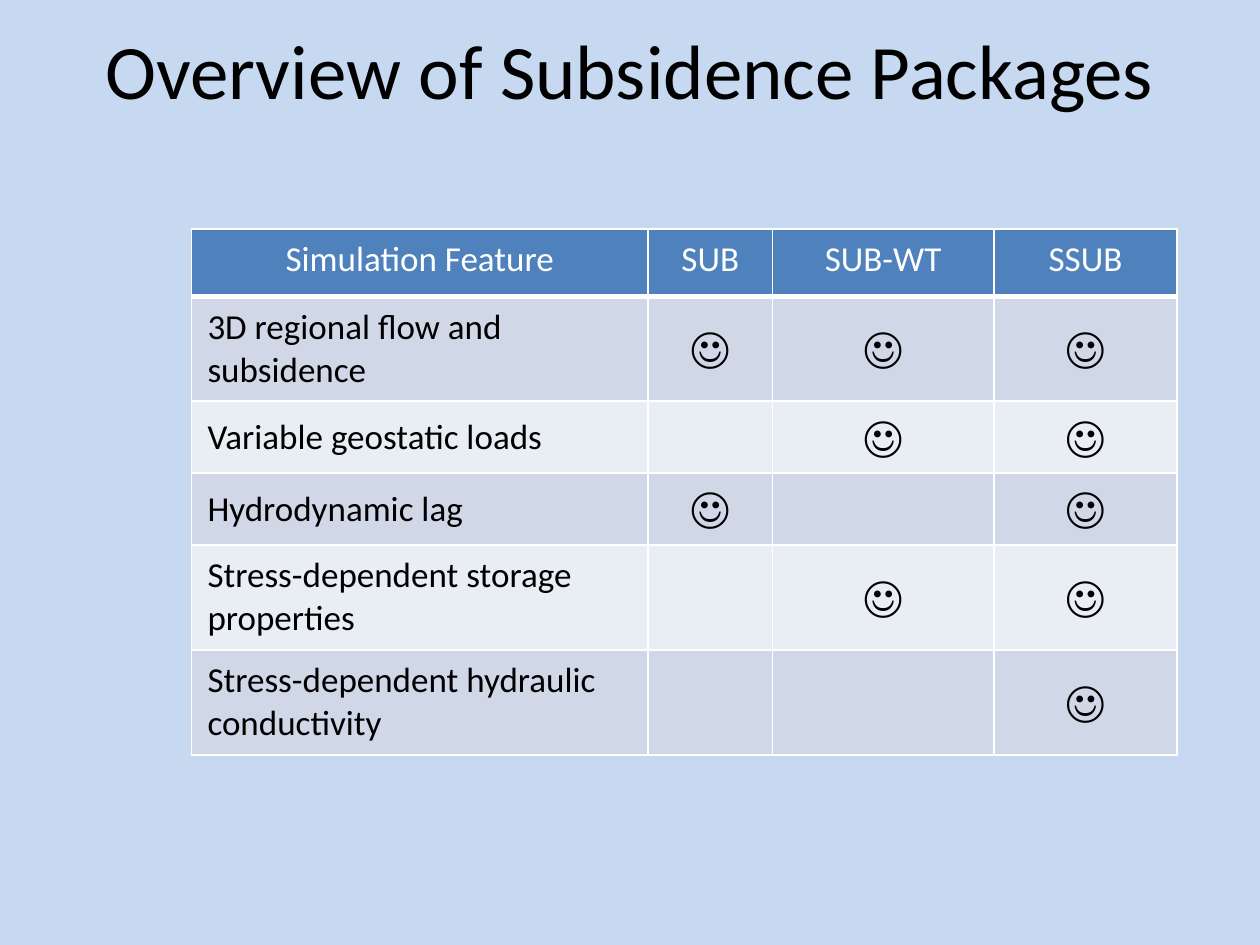
import pptx
import pptx.dml.color
import pptx.enum.text
import pptx.oxml
import pptx.oxml.ns
import pptx.util
from dataclasses import dataclass

Pt = pptx.util.Pt
Align = pptx.enum.text.PP_ALIGN
Anchor = pptx.enum.text.MSO_ANCHOR


@dataclass(frozen=True)
class Theme:
    font: str = "Calibri"
    background: str = "C6D9F1"
    header: str = "4F81BD"
    bands: tuple = ("D0D8E8", "E9EDF4")
    light: str = "FFFFFF"
    dark: str = "000000"
    title_size: float = 44
    body_size: float = 20
    mark_size: float = 25
    line: float = 1
    header_line: float = 3


def rgb(value):
    return pptx.dml.color.RGBColor.from_string(value)


def write_text(frame, text, font, size, color, align=Align.CENTER):
    para = frame.paragraphs[0]
    para.alignment = align
    para.font.size = Pt(size)
    if text:
        span = para.add_run()
        span.text = text
        span.font.name = font
        span.font.size = Pt(size)
        span.font.color.rgb = rgb(color)


class SlideBuilder:
    def __init__(self, page, theme):
        self.page = page
        self.theme = theme
        page.background.fill.solid()
        page.background.fill.fore_color.rgb = rgb(theme.background)

    def title(self, text, left, top, width, height):
        box = self.page.shapes.add_textbox(Pt(left), Pt(top), Pt(width), Pt(height))
        frame = box.text_frame
        frame.word_wrap = True
        frame.vertical_anchor = Anchor.MIDDLE
        write_text(frame, text, self.theme.font, self.theme.title_size, self.theme.dark)

    def borders(self, cell, bottom):
        properties = cell._tc.get_or_add_tcPr()
        line = self.theme.line
        for side, width in (("L", line), ("R", line), ("T", line), ("B", bottom)):
            properties.append(pptx.oxml.parse_xml(
                f'<a:ln{side} {pptx.oxml.ns.nsdecls("a")} w="{Pt(width)}"><a:solidFill>'
                f'<a:srgbClr val="{self.theme.light}"/></a:solidFill></a:ln{side}>'))

    def cell(self, cell, text, is_header, band):
        theme = self.theme
        self.borders(cell, theme.header_line if is_header else theme.line)
        cell.fill.solid()
        cell.fill.fore_color.rgb = rgb(theme.header if is_header else theme.bands[band])
        cell.margin_left = cell.margin_right = Pt(9.2)
        cell.margin_top = cell.margin_bottom = Pt(5)
        cell.vertical_anchor = Anchor.TOP if is_header else Anchor.MIDDLE
        is_label = not is_header and text not in (MARK, "")
        write_text(cell.text_frame, text, theme.font,
                   theme.mark_size if text == MARK else theme.body_size,
                   theme.light if is_header else theme.dark,
                   Align.LEFT if is_label else Align.CENTER)

    def table(self, rows, left, top, widths, heights):
        frame = self.page.shapes.add_table(
            len(rows), len(widths), Pt(left), Pt(top), Pt(sum(widths)), Pt(sum(heights)))
        table = frame.table
        for column, width in zip(table.columns, widths):
            column.width = Pt(width)
        for r, (values, height) in enumerate(zip(rows, heights)):
            table.rows[r].height = Pt(height)
            for c, text in enumerate(values):
                self.cell(table.cell(r, c), text, r == 0, (r - 1) % 2)


MARK = "☺"
PACKAGES = ["SUB", "SUB-WT", "SSUB"]
FEATURES = {
    "3D regional flow and subsidence": PACKAGES,
    "Variable geostatic loads": ["SUB-WT", "SSUB"],
    "Hydrodynamic lag": ["SUB", "SSUB"],
    "Stress-dependent storage properties": ["SUB-WT", "SSUB"],
    "Stress-dependent hydraulic conductivity": ["SSUB"],
}
ONE_LINE, TWO_LINES = 41.1, 60
ROW_HEIGHTS = [38.3, TWO_LINES, ONE_LINE, ONE_LINE, TWO_LINES, TWO_LINES]
TABLE_LEFT, TABLE_TOP = 109.4, 131
MAIN_WIDTHS = [261, 71, 126.7]


def main():
    deck = pptx.Presentation()
    deck.slide_width, deck.slide_height = Pt(720), Pt(540)
    builder = SlideBuilder(deck.slides.add_slide(deck.slide_layouts[6]), Theme())

    # Title
    builder.title("Overview of Subsidence Packages", 36, -6, 648, 90)

    # Feature grid, with the last package in a table of its own
    rows = [["Simulation Feature"] + PACKAGES]
    for feature, supported in FEATURES.items():
        rows.append([feature] + [MARK if name in supported else "" for name in PACKAGES])
    builder.table([row[-1:] for row in rows], TABLE_LEFT + sum(MAIN_WIDTHS), TABLE_TOP,
                  [104.4], ROW_HEIGHTS)
    builder.table([row[:-1] for row in rows], TABLE_LEFT, TABLE_TOP,
                  MAIN_WIDTHS, ROW_HEIGHTS)

    deck.save("out.pptx")


if __name__ == "__main__":
    main()
